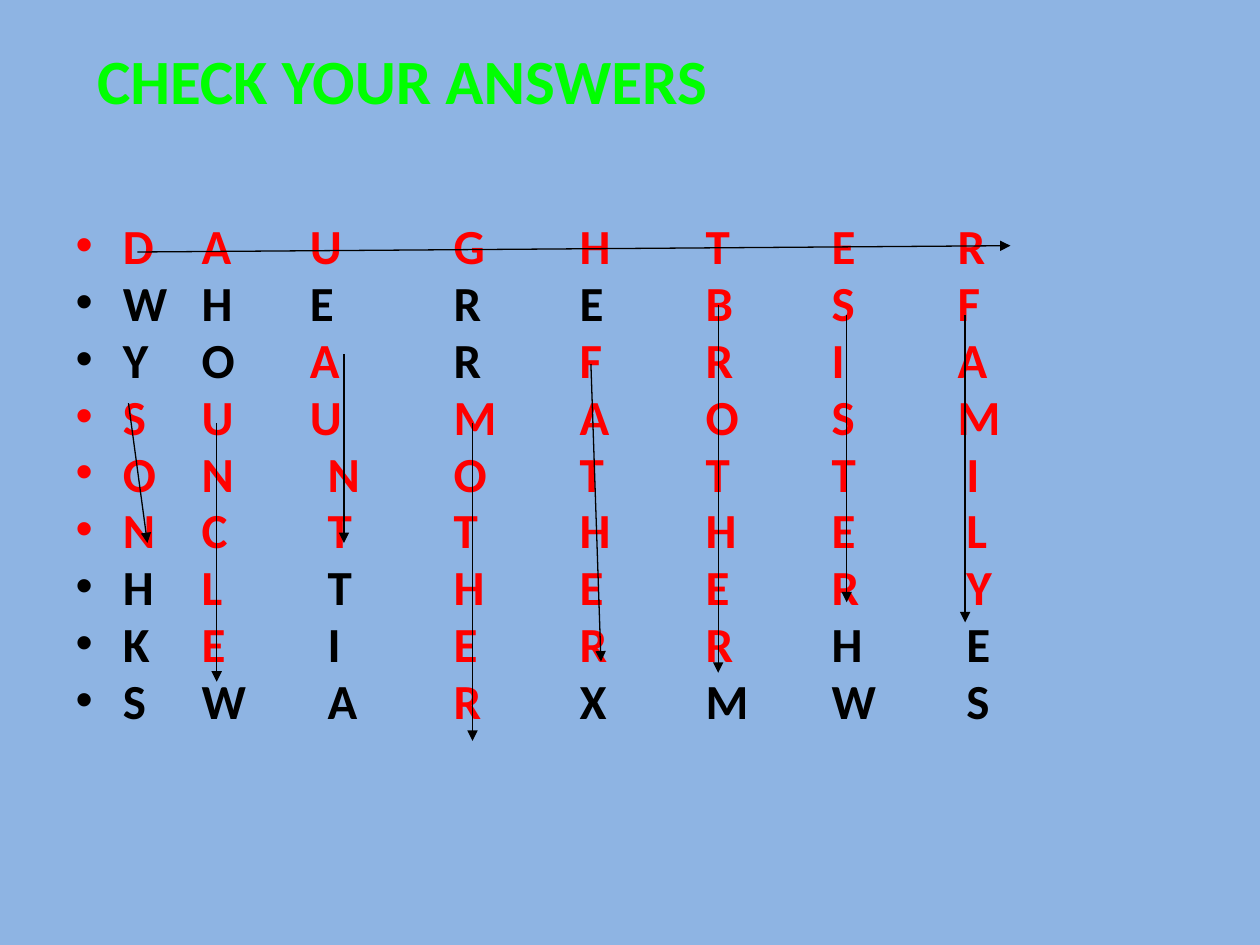
import itertools

import pptx
import pptx.dml.color
import pptx.enum.shapes
import pptx.enum.text
import pptx.oxml
import pptx.oxml.ns
import pptx.util
from pptx.util import Inches

# Content
TITLE = "CHECK YOUR ANSWERS"
GRID = [
    "DAUGHTER",
    "WHEREBSF",
    "YOARFRIA",
    "SUUMAOSM",
    "ONNOTTTI",
    "NCTTHHEL",
    "HLTHEERY",
    "KEIERRHE",
    "SWARXMWS",
]
# Hidden words: word, first row, first column, step (row, column), arrow start, arrow end
ACROSS, DOWN = (0, 1), (1, 0)
ANSWERS = [
    ("DAUGHTER", 0, 0, ACROSS, (1.09, 2), (8.02, 1.95)),
    ("FAMILY", 1, 7, DOWN, (7.66, 2.5), (7.66, 4.94)),
    ("SISTER", 1, 6, DOWN, (6.72, 2.5), (6.72, 4.78)),
    ("FATHER", 2, 4, DOWN, (4.69, 2.89), (4.77, 5.25)),
    ("MOTHER", 3, 3, DOWN, (3.75, 3.36), (3.75, 5.88)),
    ("UNCLE", 3, 1, DOWN, (1.72, 3.36), (1.72, 5.41)),
    ("SON", 3, 0, DOWN, (1.02, 3.2), (1.17, 4.31)),
    ("AUNT", 2, 2, DOWN, (2.73, 2.81), (2.73, 4.31)),
    ("BROTHER", 1, 5, DOWN, (5.7, 2.42), (5.7, 5.34)),
]
# Letters set off the one-inch columns: row -> tab stops
TAB_STOPS = {0: [1, 1.86, 3, 4, 5, 6, 7], 4: [1, 2, 3, 4, 5, 6, 7.07]}

THEME = {
    "font": "Calibri",
    "background": "8EB4E3",
    "title": "00FF00",
    "found": "FF0000",
    "plain": "000000",
    "title_size": 36,
    "letter_size": 28,
    "line_width": 0.75,
}


def color(name):
    return pptx.dml.color.RGBColor.from_string(THEME[name])


def format_run(run, size, color_name):
    run.font.name = THEME["font"]
    run.font.size = pptx.util.Pt(THEME[size])
    run.font.bold = True
    run.font.color.rgb = color(color_name)


def place(shape, left, top, width, height):
    shape.left, shape.top = Inches(left), Inches(top)
    shape.width, shape.height = Inches(width), Inches(height)
    shape.text_frame.word_wrap = True
    shape.text_frame.auto_size = pptx.enum.text.MSO_AUTO_SIZE.NONE
    shape.text_frame.vertical_anchor = pptx.enum.text.MSO_ANCHOR.TOP


def set_tab_stops(paragraph, stops):
    tab_list = pptx.oxml.parse_xml(f"<a:tabLst {pptx.oxml.ns.nsdecls('a')}/>")
    for stop in stops:
        tab = tab_list.makeelement(pptx.oxml.ns.qn("a:tab"), {"pos": str(Inches(stop)), "algn": "l"})
        tab_list.append(tab)
    paragraph._p.get_or_add_pPr().append(tab_list)


def add_arrow(slide, start, end):
    arrow = slide.shapes.add_connector(
        pptx.enum.shapes.MSO_CONNECTOR.STRAIGHT, *map(Inches, start + end))
    arrow.line.color.rgb = color("plain")
    arrow.line.width = pptx.util.Pt(THEME["line_width"])
    namespace = pptx.oxml.ns.nsdecls("a")
    arrow.line._get_or_add_ln().append(
        pptx.oxml.parse_xml(f'<a:tailEnd {namespace} type="triangle"/>'))
    arrow._element.spPr.append(pptx.oxml.parse_xml(f"<a:effectLst {namespace}/>"))


def main():
    presentation = pptx.Presentation()
    presentation.slide_width, presentation.slide_height = Inches(10), Inches(7.5)
    slide = presentation.slides.add_slide(presentation.slide_layouts[1])
    slide.background.fill.solid()
    slide.background.fill.fore_color.rgb = color("background")

    # Title
    title = slide.shapes.title
    place(title, 0.67, 0.28, 8.19, 0.7)
    title.text_frame.text = TITLE
    heading = title.text_frame.paragraphs[0]
    heading.alignment = pptx.enum.text.PP_ALIGN.LEFT
    format_run(heading.runs[0], "title_size", "title")

    # Letter grid, with the letters of the hidden words highlighted
    found = {
        (row + row_step * index, column + column_step * index)
        for word, row, column, (row_step, column_step), _, _ in ANSWERS
        for index in range(len(word))
    }
    body = slide.placeholders[1]
    place(body, 0.5, 1.75, 9, 4.27)
    body.text_frame.text = "\n" * (len(GRID) - 1)
    for row, (letters, paragraph) in enumerate(zip(GRID, body.text_frame.paragraphs)):
        paragraph.line_spacing = 0.8
        if row in TAB_STOPS:
            set_tab_stops(paragraph, TAB_STOPS[row])
        columns = range(len(letters))
        for is_found, group in itertools.groupby(columns, lambda column: (row, column) in found):
            run = paragraph.add_run()
            run.text = "".join(
                letters[column] + ("\t" if column < columns[-1] else "") for column in group)
            format_run(run, "letter_size", "found" if is_found else "plain")

    # Arrows along the hidden words
    for *_, start, end in ANSWERS:
        add_arrow(slide, start, end)

    presentation.save("out.pptx")


if __name__ == "__main__":
    main()
